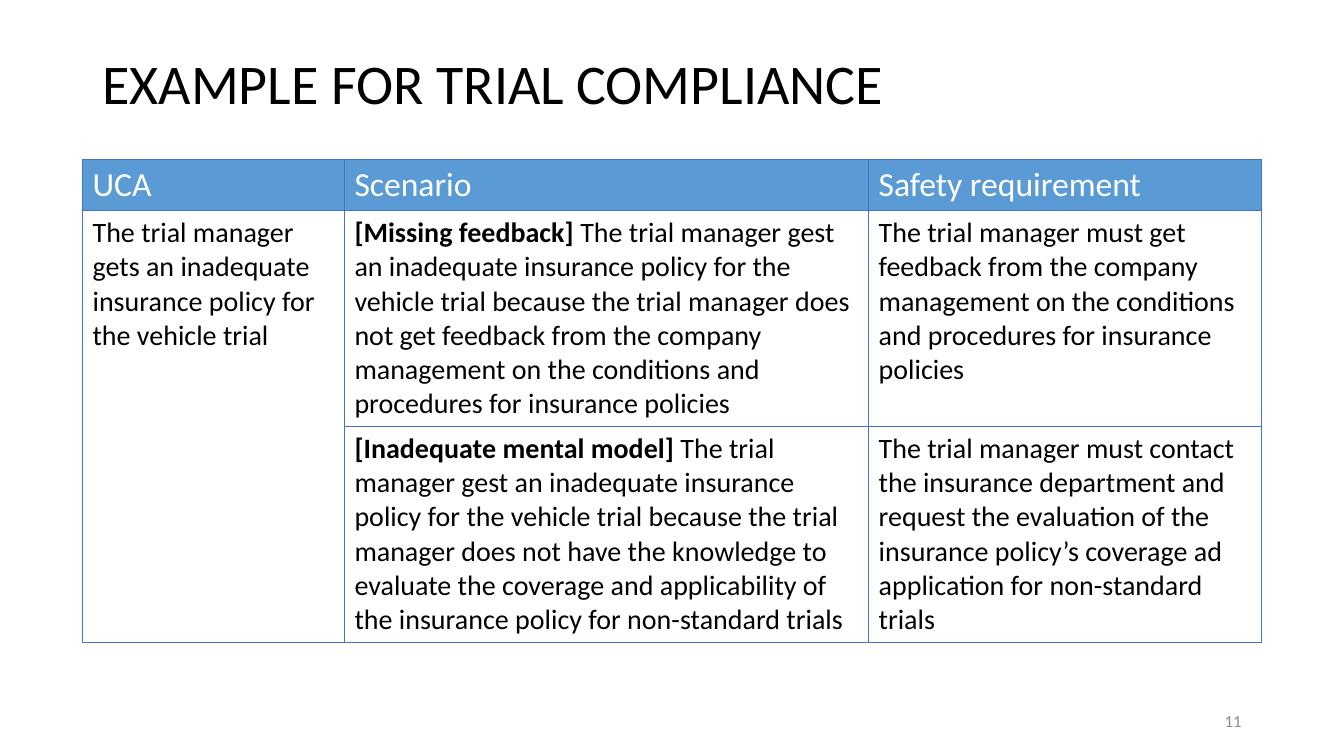
"""Build a slide with a table of trial compliance scenarios."""
from dataclasses import dataclass

from lxml.etree import SubElement
from pptx import Presentation
from pptx.dml.color import RGBColor
from pptx.enum.text import MSO_ANCHOR, PP_ALIGN
from pptx.oxml.ns import qn
from pptx.util import Cm, Pt

BLUE, EDGE, WHITE, BLACK, GRAY = "5B9BD5", "4472C4", "FFFFFF", "000000", "8C8C8C"
WIDTHS = (6.6, 13.21, 9.91)
HEIGHTS = (1.3, 5.44, 5.44)


@dataclass
class Label:
    text: str
    box: tuple[float, float, float, float]
    size: float
    color: str
    align: PP_ALIGN
    space: float


@dataclass
class Entry:
    row: int
    col: int
    text: str
    lead: str = ""


LABELS = (
    Label("EXAMPLE FOR TRIAL COMPLIANCE", (2.33, 0.33, 29.21, 3.68), 40, BLACK,
          PP_ALIGN.LEFT, 0.9),
    Label("11", (23.92, 17.65, 7.62, 1.01), 12, GRAY, PP_ALIGN.RIGHT, 1.0),
)
ENTRIES = (
    Entry(0, 0, "UCA"),
    Entry(0, 1, "Scenario"),
    Entry(0, 2, "Safety requirement"),
    Entry(1, 0, "The trial manager gets an inadequate insurance policy for the "
          "vehicle trial"),
    Entry(1, 1, "The trial manager gest an inadequate insurance policy for the "
          "vehicle trial because the trial manager does not get feedback from the "
          "company management on the conditions and procedures for insurance "
          "policies", "[Missing feedback] "),
    Entry(1, 2, "The trial manager must get feedback from the company management "
          "on the conditions and procedures for insurance policies"),
    Entry(2, 1, "The trial manager gest an inadequate insurance policy for the "
          "vehicle trial because the trial manager does not have the knowledge to "
          "evaluate the coverage and applicability of the insurance policy for "
          "non-standard trials", "[Inadequate mental model] "),
    Entry(2, 2, "The trial manager must contact the insurance department and "
          "request the evaluation of the insurance policy’s coverage ad "
          "application for non-standard trials"),
)


def paint(part, color: str) -> None:
    """Give a font or fill a solid colour."""
    part.color.rgb = RGBColor.from_string(color)


def apply(target, values: dict) -> None:
    """Set each named value on the target."""
    for name, value in values.items():
        setattr(target, name, value)


def write(para, text: str, size: float, color: str, bold: bool = False) -> None:
    """Add one styled run to a paragraph."""
    run = para.add_run()
    run.text = text
    apply(run.font, {"name": "Calibri", "size": Pt(size), "bold": bold})
    paint(run.font, color)


def border(cell) -> None:
    """Draw a thin line on all four sides of a cell."""
    props = cell._tc.get_or_add_tcPr()
    for spot, side in enumerate(("a:lnL", "a:lnR", "a:lnT", "a:lnB")):
        line = SubElement(props, qn(side), w=str(Pt(1)))
        fill = SubElement(line, qn("a:solidFill"))
        SubElement(fill, qn("a:srgbClr"), val=EDGE)
        props.insert(spot, line)


def add_label(slide, label: Label) -> None:
    """Place a line of text on the slide."""
    frame = slide.shapes.add_textbox(*map(Cm, label.box)).text_frame
    apply(frame, {"word_wrap": True, "vertical_anchor": MSO_ANCHOR.MIDDLE})
    para = frame.paragraphs[0]
    apply(para, {"alignment": label.align, "line_spacing": label.space})
    write(para, label.text, label.size, label.color)


def add_grid(slide) -> None:
    """Place the table with its header and merged first column."""
    table = slide.shapes.add_table(
        len(HEIGHTS), len(WIDTHS), Cm(2.08), Cm(4.01),
        Cm(sum(WIDTHS)), Cm(sum(HEIGHTS))).table
    apply(table, {"first_row": False, "horz_banding": False})
    for col, width in zip(table.columns, WIDTHS):
        col.width = Cm(width)
    for row, height in zip(table.rows, HEIGHTS):
        row.height = Cm(height)
    for index, cell in enumerate(table.iter_cells()):
        cell.fill.solid()
        cell.fill.fore_color.rgb = RGBColor.from_string(
            BLUE if index < len(WIDTHS) else WHITE)
        border(cell)
    table.cell(1, 0).merge(table.cell(2, 0))
    for entry in ENTRIES:
        size, color = (20, BLACK) if entry.row else (24, WHITE)
        para = table.cell(entry.row, entry.col).text_frame.paragraphs[0]
        if entry.lead:
            write(para, entry.lead, size, color, True)
        write(para, entry.text, size, color)


def main() -> None:
    """Build and save the deck."""
    deck = Presentation()
    apply(deck, {"slide_width": Cm(33.87), "slide_height": Cm(19.05)})
    slide = deck.slides.add_slide(deck.slide_layouts[6])
    add_grid(slide)
    for label in LABELS:
        add_label(slide, label)
    deck.save("out.pptx")


if __name__ == "__main__":
    main()
